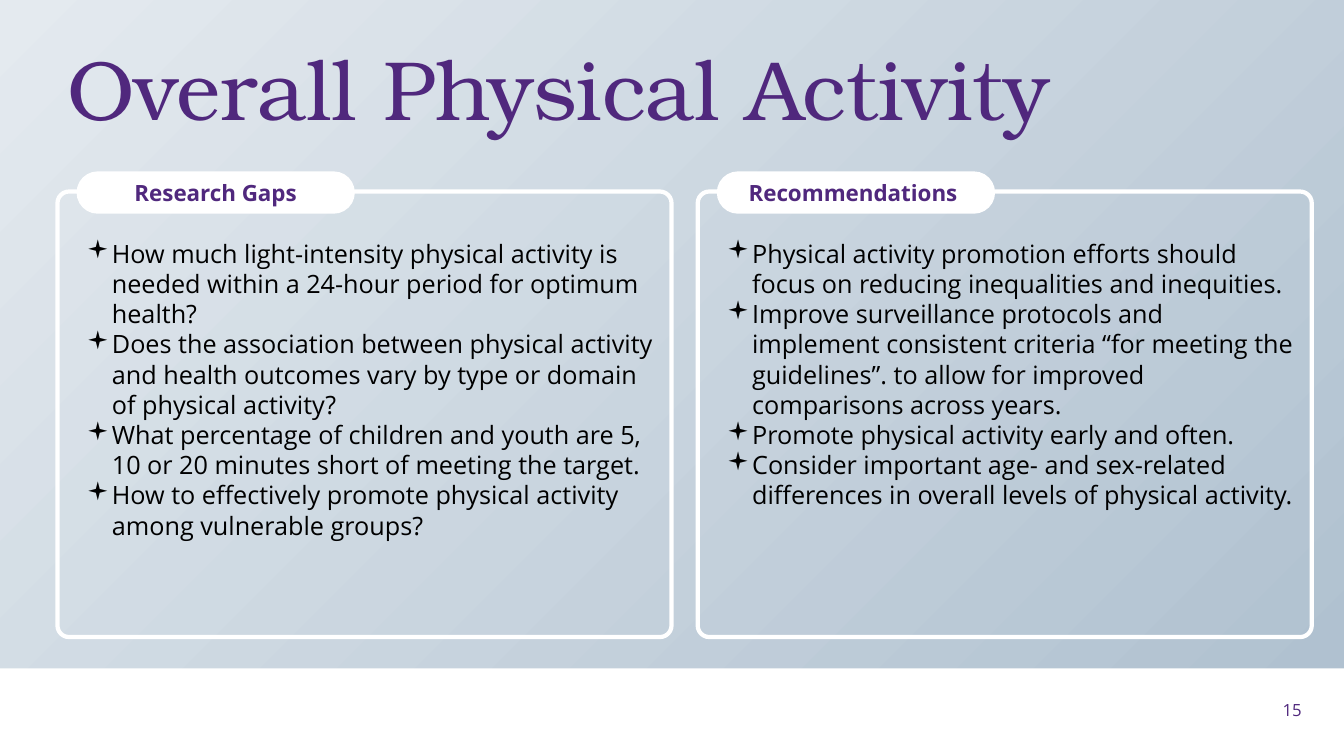
from dataclasses import dataclass

from lxml.etree import SubElement
from pptx import Presentation
from pptx.dml.color import RGBColor
from pptx.enum.shapes import MSO_SHAPE as Kind
from pptx.enum.text import MSO_ANCHOR as Anchor, MSO_AUTO_SIZE as Fit, PP_ALIGN as Align
from pptx.oxml import parse_xml
from pptx.oxml.ns import nsdecls, qn
from pptx.util import Emu, Pt

SCALE = 9144  # EMU per px, 100 px to the inch
WIDE, HIGH, SPLIT = 1333, 750, 663

PURPLE = RGBColor(0x50, 0x28, 0x7D)
BLACK = RGBColor(0, 0, 0)
WHITE = RGBColor(0xFF, 0xFF, 0xFF)
STEEL = RGBColor(0xB0, 0xC1, 0xD0)
MIST = RGBColor(0xE4, 0xEA, 0xEF)
SANS = "Open Sans"
SERIF = "TeX Gyre Bonum"


@dataclass
class Card:
    left: int
    head: str
    items: list[str]


CARDS = [
    Card(57, "Research Gaps", [
        "How much light-intensity physical activity is needed within a 24-hour period for optimum health?",
        "Does the association between physical activity and health outcomes vary by type or domain of physical activity?",
        "What percentage of children and youth are 5, 10 or 20 minutes short of meeting the target.",
        "How to effectively promote physical activity among vulnerable groups?",
    ]),
    Card(692, "Recommendations ", [
        "Physical activity promotion efforts should focus on reducing inequalities and inequities.",
        "Improve surveillance protocols and implement consistent criteria “for meeting the guidelines”. "
        "to allow for improved comparisons across years.",
        "Promote physical activity early and often.",
        "Consider important age- and sex-related differences in overall levels of physical activity.",
    ]),
]


def px(num: int) -> Emu:
    return Emu(num * SCALE)


def place(shape, left: int, top: int, width: int, height: int) -> None:
    shape.left, shape.top = px(left), px(top)
    shape.width, shape.height = px(width), px(height)


def block(slide, kind, left: int, top: int, width: int, height: int, fill=None, round=None):
    shape = slide.shapes.add_shape(kind, px(left), px(top), px(width), px(height))
    shape.shadow.inherit = False
    shape.line.fill.background()
    if fill is None:
        shape.fill.background()
    else:
        shape.fill.solid()
        shape.fill.fore_color.rgb = fill
    if round is not None:
        shape.adjustments[0] = round
    return shape


def write(shape, lines: list[str], size: int, font=SANS, color=PURPLE, bold=False,
          align=Align.LEFT, anchor=Anchor.MIDDLE, space=1.0, bullet=None) -> None:
    frame = shape.text_frame
    frame.word_wrap = True
    frame.auto_size = Fit.NONE
    frame.vertical_anchor = anchor
    for num, line in enumerate(lines):
        para = frame.add_paragraph() if num else frame.paragraphs[0]
        if bullet:
            props = para._p.get_or_add_pPr()
            props.set("marL", str(px(25)))
            props.set("indent", str(-px(25)))
            SubElement(props, qn("a:buFont"), typeface="Wingdings")
            SubElement(props, qn("a:buChar"), char=bullet)
        para.alignment = align
        para.space_before = Pt(0)
        para.line_spacing = space
        run = para.add_run()
        run.text = line
        run.font.size, run.font.name, run.font.bold = Pt(size), font, bold
        run.font.color.rgb = color


def backdrop(slide, title) -> None:
    sky = block(slide, Kind.RECTANGLE, 0, 0, WIDE, SPLIT, fill=STEEL)
    sky.fill.gradient()
    for stop, color in zip(sky.fill.gradient_stops, (STEEL, MIST)):
        stop.color.rgb = color
    # Radial spread from the lower right corner
    line = sky.element.spPr.find(qn("a:gradFill")).find(qn("a:lin"))
    line.getparent().replace(line, parse_xml(
        f'<a:path {nsdecls("a")} path="circle"><a:fillToRect l="100000" t="100000"/></a:path>'))
    band = block(slide, Kind.RECTANGLE, 0, SPLIT, WIDE, HIGH - SPLIT, fill=WHITE)
    for part in (sky, band):
        title.element.addprevious(part.element)


def draw(slide, card: Card, body) -> None:
    frame = block(slide, Kind.ROUNDED_RECTANGLE, card.left, 190, 609, 442, round=0.026)
    frame.line.color.rgb = WHITE
    frame.line.width = Pt(3)
    inner = card.left + 19
    place(body, inner, 231, 586, 296)
    write(body, card.items, 18, color=BLACK, anchor=Anchor.TOP, bullet="▪")
    pill = block(slide, Kind.ROUNDED_RECTANGLE, inner, 170, 276, 42, fill=WHITE, round=0.5)
    write(pill, [card.head], 16, bold=True, align=Align.CENTER)


def main() -> None:
    deck = Presentation()
    deck.slide_width, deck.slide_height = px(WIDE), px(HIGH)
    slide = deck.slides.add_slide(deck.slide_layouts[3])
    title, *bodies = slide.placeholders

    # Background and title
    backdrop(slide, title)
    place(title, 57, 26, 1150, 145)
    write(title, ["Overall Physical Activity"], 60, font=SERIF, space=Pt(55))

    # Two framed lists
    for card, body in zip(CARDS, bodies):
        draw(slide, card, body)

    # Slide number
    page = slide.shapes.add_textbox(px(1254), px(684), px(47), px(40))
    write(page, ["15"], 12, align=Align.RIGHT)

    deck.save("out.pptx")


if __name__ == "__main__":
    main()
